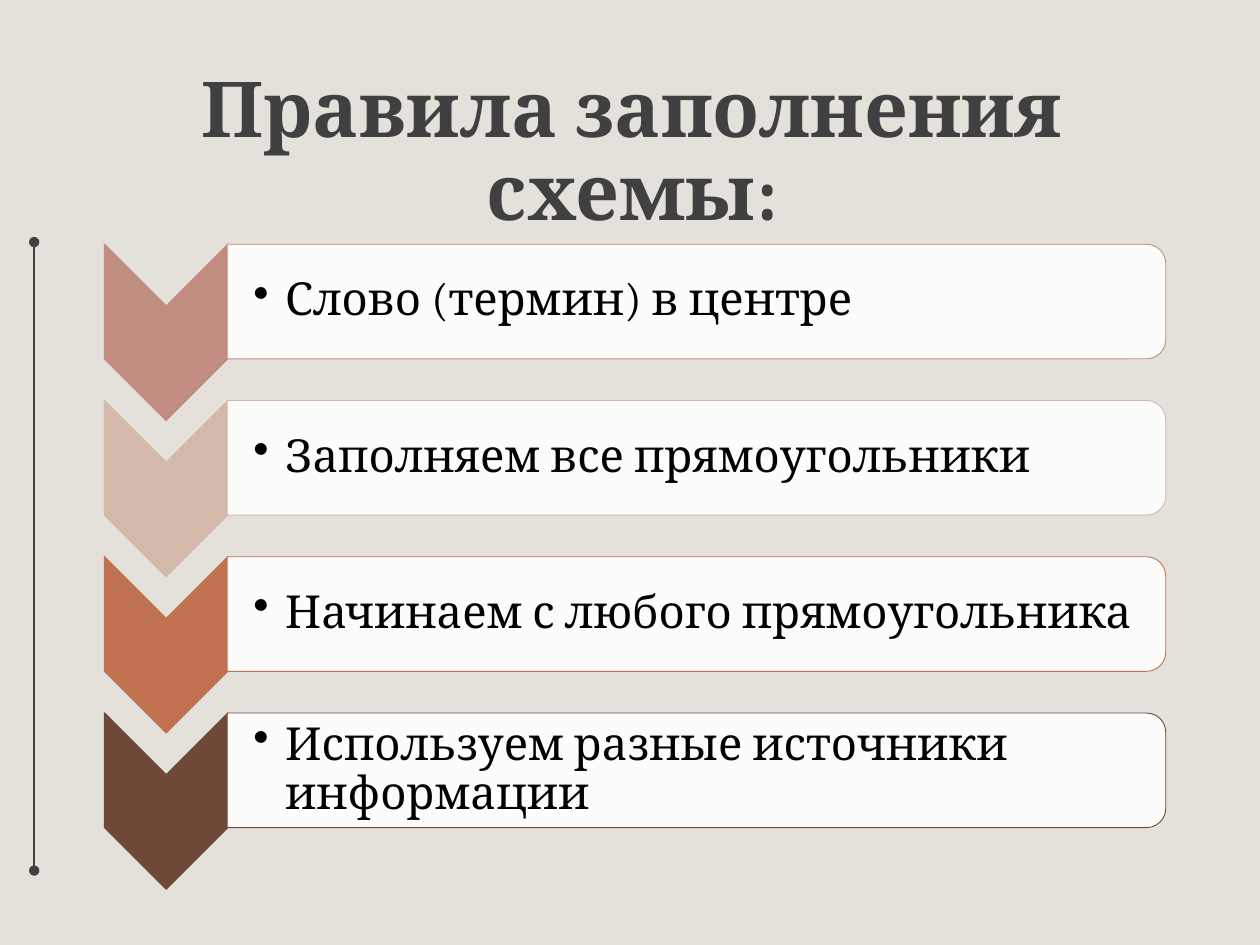
from dataclasses import dataclass

from lxml import etree
from pptx import Presentation
from pptx import util as u
from pptx.dml.color import RGBColor
from pptx.enum import shapes, text
from pptx.oxml import ns

FONT = "Cambria"
PAPER = RGBColor(0xE4, 0xE1, 0xDB)
GREY = RGBColor(0x40, 0x40, 0x40)
WHITE = RGBColor(0xFF, 0xFF, 0xFF)
INK = RGBColor(0x01, 0x01, 0x01)
ROSE = RGBColor(0xC0, 0x8D, 0x80)
SAND = RGBColor(0xD3, 0xB9, 0xAA)
RUST = RGBColor(0xC1, 0x72, 0x50)
BROWN = RGBColor(0x6F, 0x48, 0x38)

STEP = 3.15  # cm between rules


@dataclass
class Rule:
    label: str
    tint: RGBColor


RULES = [
    Rule("Слово (термин) в центре", ROSE),
    Rule("Заполняем все прямоугольники", SAND),
    Rule("Начинаем с любого прямоугольника", RUST),
    Rule("Используем разные источники информации", BROWN),
]


def add_sub(node, tag: str, **attrs: str):
    return etree.SubElement(node, ns.qn(tag), attrs)


def add_run(para, words: str, size: float, color: RGBColor, bold: bool = False) -> None:
    run = para.add_run()
    run.text = words
    run.font.name = FONT
    run.font.size = u.Pt(size)
    run.font.bold = bold
    run.font.color.rgb = color


def add_turned(slide, kind, mid_x: float, mid_y: float, wide: float, high: float,
               fill: RGBColor, line: RGBColor):
    """Add a shape turned by 90 degrees about its centre; lengths in cm."""
    shape = slide.shapes.add_shape(kind, u.Cm(mid_x - wide / 2), u.Cm(mid_y - high / 2),
                                   u.Cm(wide), u.Cm(high))
    shape.rotation = 90
    shape.shadow.inherit = False
    shape.fill.solid()
    shape.fill.fore_color.rgb = fill
    shape.line.color.rgb = line
    shape.line.width = u.Pt(0.5)
    return shape


def add_label(slide, words: str, top: float) -> None:
    box = slide.shapes.add_textbox(u.Cm(4.6), u.Cm(top), u.Cm(18.8), u.Cm(2.08))
    frame = box.text_frame
    frame.word_wrap = True
    frame.vertical_anchor = text.MSO_ANCHOR.MIDDLE
    frame.margin_left = u.Cm(0.51)
    frame.margin_right = frame.margin_top = frame.margin_bottom = u.Cm(0.05)
    para = frame.paragraphs[0]
    props = para._p.get_or_add_pPr()
    props.set("marL", str(u.Cm(0.64)))
    props.set("indent", str(-u.Cm(0.64)))
    add_sub(props, "a:buChar", char="•")
    para.line_spacing = 0.9
    para.space_after = u.Pt(4)
    add_run(para, words, 26, INK)


def add_rule(slide, rule: Rule, shift: float) -> None:
    kind = shapes.MSO_SHAPE
    add_turned(slide, kind.CHEVRON, 3.35, 6.7 + shift, 3.56, 2.49, rule.tint, rule.tint)
    panel = add_turned(slide, kind.ROUND_2_SAME_RECTANGLE, 14.04, 6.08 + shift,
                       2.31, 18.92, WHITE, rule.tint)
    shade = panel._element.spPr.find(ns.qn("a:solidFill"))[0]
    add_sub(shade, "a:alpha", val="90000")
    add_label(slide, rule.label, 5.03 + shift)


def add_rail(slide) -> None:
    rail = slide.shapes.add_connector(shapes.MSO_CONNECTOR.STRAIGHT,
                                      u.Cm(0.69), u.Cm(4.88), u.Cm(0.69), u.Cm(17.55))
    rail.line.color.rgb = GREY
    rail.line.width = u.Pt(1)
    edge = rail.line._get_or_add_ln()
    for end in ("a:headEnd", "a:tailEnd"):
        add_sub(edge, end, type="oval")
    add_sub(rail._element.spPr, "a:effectLst")


def add_title(slide, words: str) -> None:
    title = slide.shapes.title
    title.left, title.top = u.Cm(1.35), u.Cm(1.27)
    title.width, title.height = u.Cm(22.78), u.Cm(3.68)
    frame = title.text_frame
    frame.auto_size = text.MSO_AUTO_SIZE.NONE
    frame.vertical_anchor = text.MSO_ANCHOR.MIDDLE
    para = frame.paragraphs[0]
    para.alignment = text.PP_ALIGN.CENTER
    para.line_spacing = 0.9
    add_run(para, words, 44, GREY, bold=True)


def main() -> None:
    deck = Presentation()
    deck.slide_width, deck.slide_height = u.Cm(25.4), u.Cm(19.05)
    slide = deck.slides.add_slide(deck.slide_layouts[5])
    slide.background.fill.solid()
    slide.background.fill.fore_color.rgb = PAPER

    # Side rail and heading
    add_rail(slide)
    add_title(slide, "Правила заполнения схемы:")

    # Chevron list
    for place, rule in enumerate(RULES):
        add_rule(slide, rule, place * STEP)

    deck.save("out.pptx")


if __name__ == "__main__":
    main()
